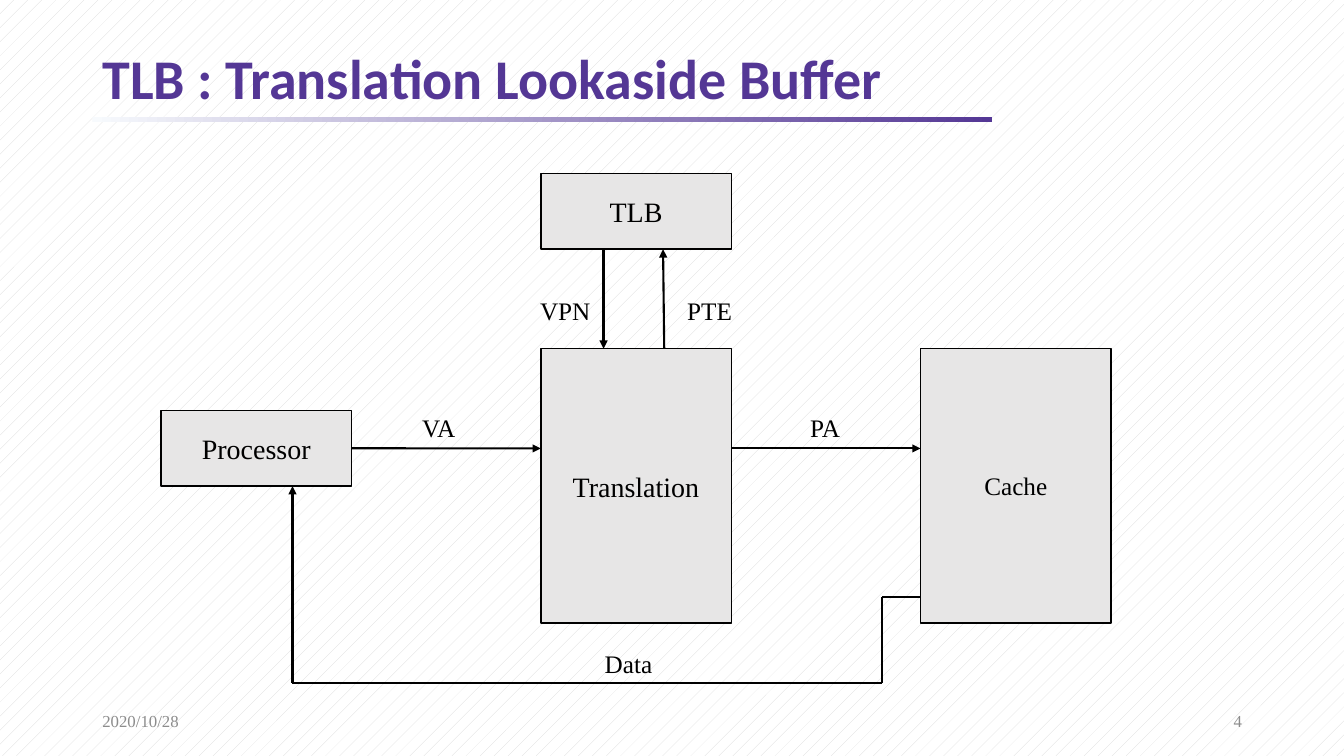
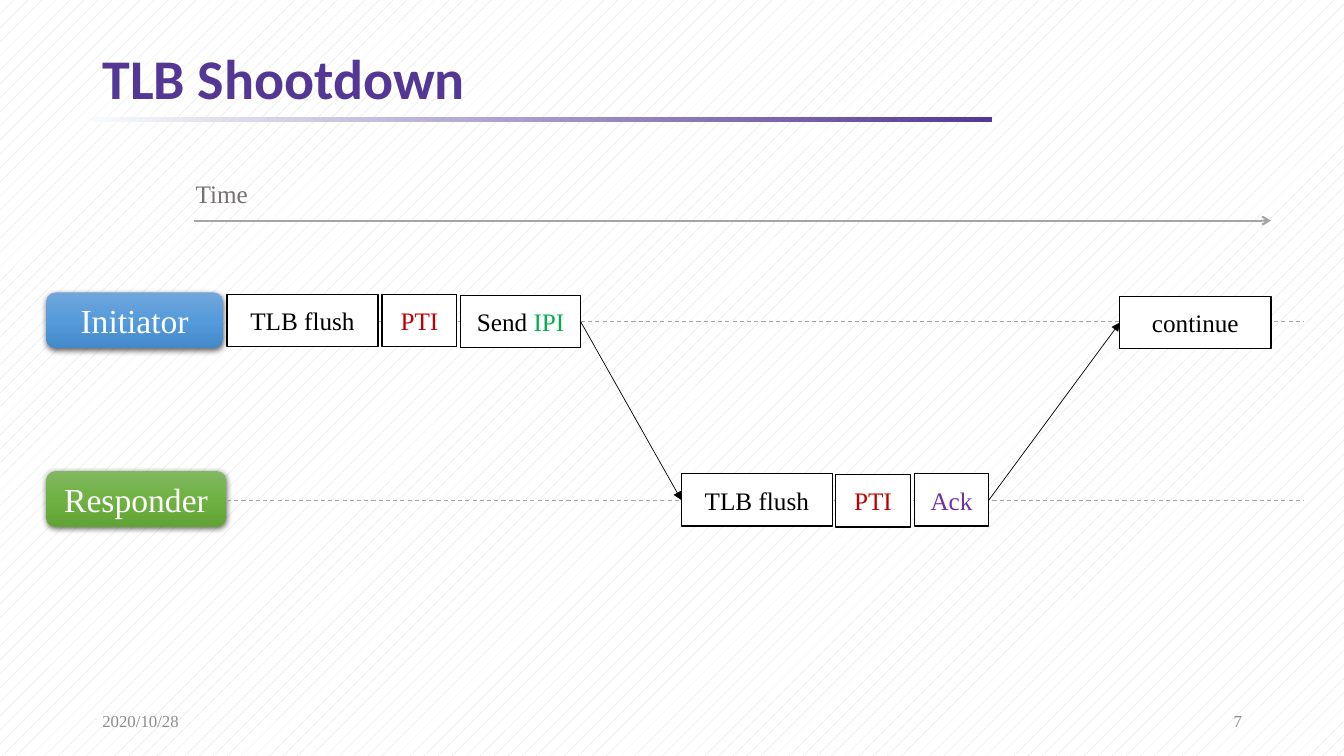
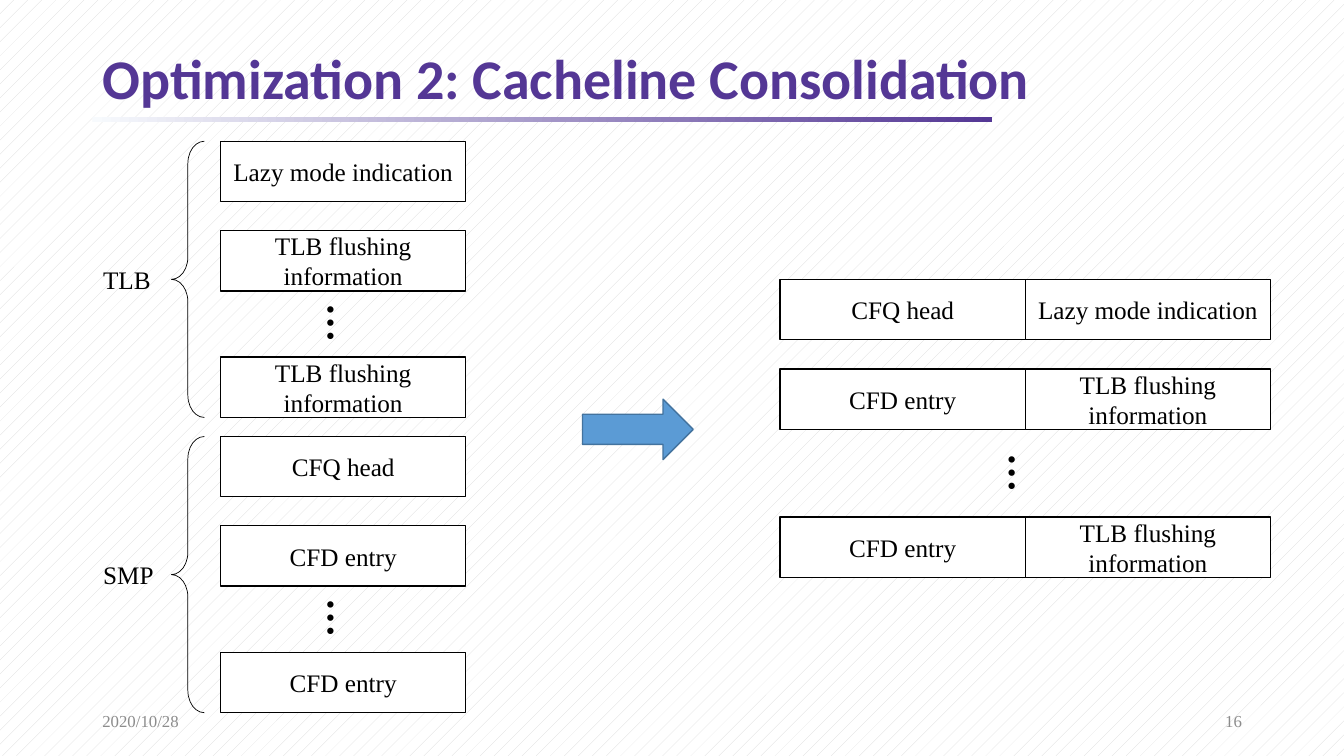
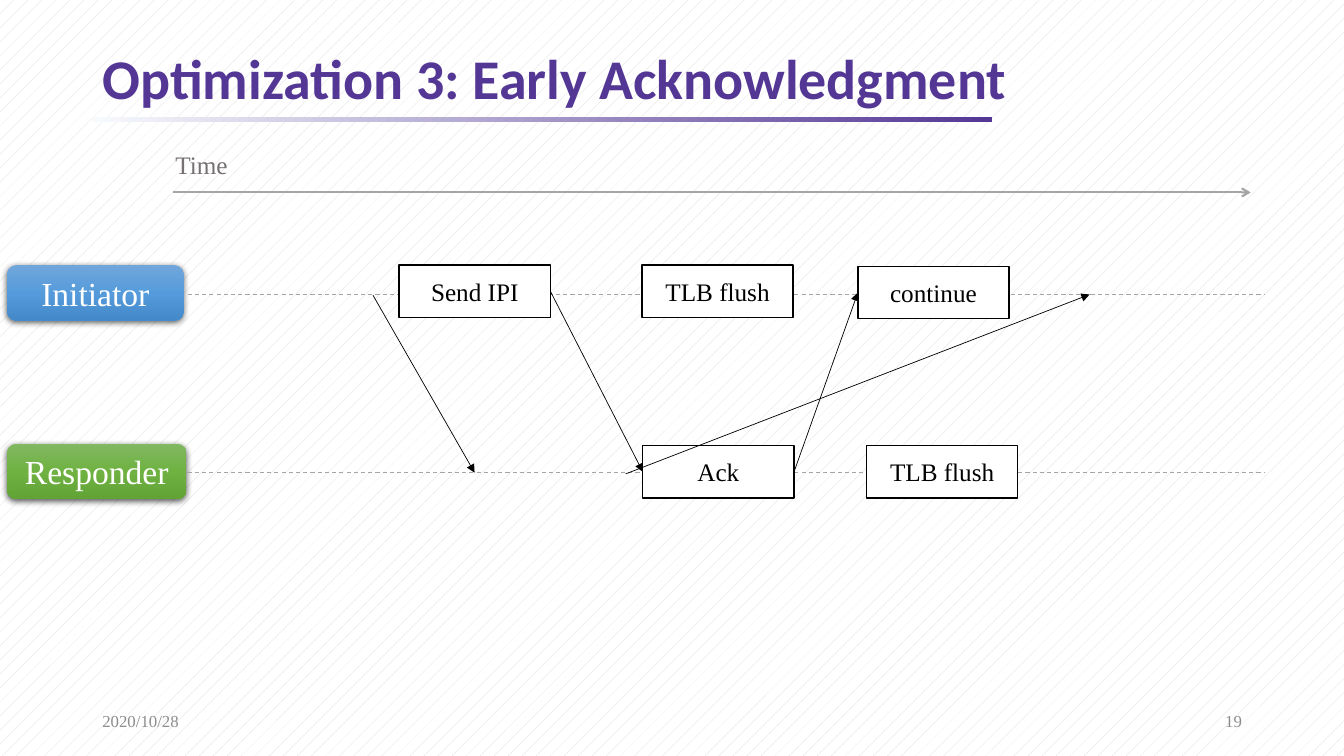
"""Build four slides on TLB shootdown and its optimizations."""
from itertools import pairwise

from lxml import etree
from pptx import Presentation
from pptx.dml.color import RGBColor
from pptx.enum import dml, shapes, text
from pptx.oxml import ns
from pptx.util import Cm, Pt

BLACK = RGBColor(0x00, 0x00, 0x00)
WHITE = RGBColor(0xFF, 0xFF, 0xFF)
PURPLE = RGBColor(0x54, 0x37, 0x95)
PALE = RGBColor(0xF7, 0xFA, 0xFD)
STRIPE = RGBColor(0xD9, 0xD9, 0xD9)
FOOTER_GRAY = RGBColor(0x8C, 0x8C, 0x8C)
BLOCK_GRAY = RGBColor(0xE7, 0xE6, 0xE6)
LINE_GRAY = RGBColor(0xA5, 0xA5, 0xA5)
TIME_GRAY = RGBColor(0x76, 0x71, 0x71)
ARROW_BLUE = RGBColor(0x5B, 0x9B, 0xD5)
ARROW_EDGE = RGBColor(0x43, 0x73, 0x9E)
RED = RGBColor(0xC0, 0x00, 0x00)
GREEN = RGBColor(0x00, 0xB0, 0x50)
VIOLET = RGBColor(0x70, 0x30, 0xA0)
BLUE_GRADIENT = (RGBColor(0x71, 0xA6, 0xDB), RGBColor(0x55, 0x9B, 0xDB),
                 RGBColor(0x44, 0x8A, 0xCA))
GREEN_GRADIENT = (RGBColor(0x81, 0xB8, 0x61), RGBColor(0x6F, 0xB2, 0x42),
                  RGBColor(0x62, 0xA3, 0x36))
BODY_FONT, TITLE_FONT = "Times New Roman", "Calibri"
LEFT, CENTER, RIGHT = (text.PP_ALIGN.LEFT, text.PP_ALIGN.CENTER,
                       text.PP_ALIGN.RIGHT)
SHAPE = shapes.MSO_SHAPE
CELL_W, CELL_H = 6.18, 1.52
STEP_W, SMALL_W, STEP_H = 3.81, 1.88, 1.32
LANE_GAP, LANE_LENGTH = 4.5, 27.15


def child(parent, tag, **attrs):
    """Append a DrawingML child element."""
    return etree.SubElement(parent, ns.qn(f"a:{tag}"), attrs)


def style(p, size, color, align=LEFT, bold=False, font=BODY_FONT):
    """Format a whole paragraph."""
    p.alignment = align
    p.font.name, p.font.size, p.font.bold = font, Pt(size), bold
    p.font.color.rgb = color


def label(s, words, x, y, w=1.8, h=1.02, size=18, color=BLACK, align=LEFT,
          bold=False, anchor=text.MSO_ANCHOR.TOP):
    """Add a text box."""
    sp = s.shapes.add_textbox(Cm(x), Cm(y), Cm(w), Cm(h))
    tf = sp.text_frame
    tf.word_wrap, tf.vertical_anchor = True, anchor
    tf.text = words
    style(tf.paragraphs[0], size, color, align, bold)
    return sp


def preset(s, kind, x, y, w, h, fill=None, line=None, width=1):
    """Add a preset shape without shadow; None leaves fill or line out."""
    sp = s.shapes.add_shape(kind, Cm(x), Cm(y), Cm(w), Cm(h))
    sp.shadow.inherit = False
    if fill is None:
        sp.fill.background()
    else:
        sp.fill.solid()
        sp.fill.fore_color.rgb = fill
    if line is None:
        sp.line.fill.background()
    else:
        sp.line.color.rgb = line
        sp.line.width = Pt(width)
    return sp


def write(sp, words, size, color):
    """Centre one line of text in a shape."""
    tf = sp.text_frame
    tf.word_wrap, tf.vertical_anchor = True, text.MSO_ANCHOR.MIDDLE
    p = tf.paragraphs[0]
    p.text = words
    style(p, size, color, CENTER)
    return p


def box(s, words, x, y, w, h, fill=WHITE, size=18, color=BLACK):
    """Add an outlined rectangle with text."""
    sp = preset(s, SHAPE.RECTANGLE, x, y, w, h, fill, BLACK)
    write(sp, words, size, color)
    return sp


def gradient(sp, colors, angle):
    """Fill a shape with evenly spaced gradient colours."""
    sp.fill.gradient()
    sp.fill.gradient_angle = angle
    stops = sp.element.spPr.find(ns.qn("a:gradFill")).find(ns.qn("a:gsLst"))
    for stop in list(stops):
        stops.remove(stop)
    for i, color in enumerate(colors):
        stop = child(stops, "gs", pos=str(100000 * i // (len(colors) - 1)))
        child(stop, "srgbClr", val=str(color))


def badge(s, words, x, y, w, colors):
    """Add a rounded lane name with gradient and soft shadow."""
    sp = preset(s, SHAPE.ROUNDED_RECTANGLE, x, y, w, 1.4)
    gradient(sp, colors, 270)
    shadow = child(sp.element.spPr.find(ns.qn("a:effectLst")), "outerShdw",
                   blurRad="57150", dist="19050", dir="5400000",
                   algn="ctr", rotWithShape="0")
    child(child(shadow, "srgbClr", val="000000"), "alpha", val="63000")
    write(sp, words, 24, WHITE)


def line(s, start, end, width=1.5, color=BLACK, head=None, dash=None):
    """Add a straight line, with an arrowhead at its end if named."""
    cn = s.shapes.add_connector(shapes.MSO_CONNECTOR.STRAIGHT,
                                *map(Cm, (*start, *end)))
    cn.line.color.rgb, cn.line.width = color, Pt(width)
    if dash:
        cn.line.dash_style = dash
    if head:
        child(cn.line._get_or_add_ln(), "tailEnd", type=head)
    child(cn.element.spPr, "effectLst")
    return cn


def message(s, sender, receiver):
    """Join the right side of one box to the left side of another."""
    cn = line(s, (0, 0), (1, 1), 0.5, head="triangle")
    cn.begin_connect(sender, 3)
    cn.end_connect(receiver, 1)


def ellipsis(s, x, y):
    """Add three vertical dots."""
    label(s, "…", x, y, 1.5, 1.45, 28, bold=True).rotation = 90


def add_rule(s, layout):
    """Put the fading title rule on the layout."""
    sp = preset(s, SHAPE.RECTANGLE, 2.33, 2.95, 22.66, 0.13)
    gradient(sp, (PALE, PURPLE), 0)
    layout.shapes.element.append(sp.element)


def new_slide(prs, title, number):
    """Add a slide with title, date and number."""
    s = prs.slides.add_slide(prs.slide_layouts[5])
    sp = s.shapes.title
    sp.left, sp.top, sp.width, sp.height = map(Cm, (2.33, 1.09, 29.21, 1.91))
    tf = sp.text_frame
    tf.text = title
    tf.auto_size = text.MSO_AUTO_SIZE.NONE
    tf.vertical_anchor = text.MSO_ANCHOR.MIDDLE
    p = tf.paragraphs[0]
    p.line_spacing = 0.9
    style(p, 40, PURPLE, bold=True, font=TITLE_FONT)
    for words, x, align in (("2020/10/28", 2.33, LEFT),
                            (str(number), 23.93, RIGHT)):
        label(s, words, x, 17.65, 7.62, size=12, color=FOOTER_GRAY,
              align=align, anchor=text.MSO_ANCHOR.MIDDLE)
    return s


def timeline(s, time_x, time_y, lane_x, lane_y):
    """Draw the time arrow and the two named lanes."""
    line(s, (time_x, time_y), (time_x + LANE_LENGTH, time_y),
         color=LINE_GRAY, head="arrow")
    label(s, "Time", time_x - 0.2, time_y - 1.2, 2.16, color=TIME_GRAY)
    lanes = (("Initiator", 4.45, BLUE_GRADIENT),
             ("Responder", 4.52, GREEN_GRADIENT))
    for i, (name, w, colors) in enumerate(lanes):
        y = lane_y + i * LANE_GAP
        badge(s, name, lane_x, y, w, colors)
        x = lane_x + 4.55
        line(s, (x, y + 0.73), (x + LANE_LENGTH, y + 0.73), 0.75, LINE_GRAY,
             dash=dml.MSO_LINE.DASH)


def lookaside_slide(s):
    """Draw the translation path through the TLB."""
    columns = [4.06 + 9.57 * i for i in range(3)]
    w, mid = 4.8, 11.3
    box(s, "Translation", columns[1], 8.79, w, 6.91, BLOCK_GRAY, 20)
    box(s, "Cache", columns[2], 8.79, w, 6.91, BLOCK_GRAY)
    box(s, "TLB", columns[1], 4.37, w, 1.91, BLOCK_GRAY, 20)
    processor = box(s, "Processor", columns[0], 10.34, w, 1.91, BLOCK_GRAY, 20)
    va = line(s, (columns[0] + w, mid), (columns[1], mid), head="triangle")
    va.begin_connect(processor, 3)
    for start, end in (((15.21, 6.28), (15.21, 8.79)),
                       ((16.74, 8.79), (16.71, 6.28)),
                       ((columns[1] + w, mid), (columns[2], mid))):
        line(s, start, end, head="triangle")
    route = ((columns[2], 15.04), (22.23, 15.04), (22.23, 17.2), (7.37, 17.2))
    for start, end in pairwise(route):
        line(s, start, end)
    line(s, route[-1], (7.37, 12.25), head="triangle")
    for words, x, y in (("VA", 10.39, 10.26), ("VPN", 13.36, 7.32),
                        ("PTE", 17.07, 7.32), ("PA", 20.17, 10.26),
                        ("Data", 14.99, 16.21)):
        label(s, words, x, y)


def shootdown_slide(s):
    """Draw the steps of a TLB shootdown."""
    timeline(s, 4.88, 5.56, 1.17, 7.37)
    box(s, "TLB flush", 5.72, 7.42, STEP_W, STEP_H)
    box(s, "PTI", 9.63, 7.42, SMALL_W, STEP_H, color=RED)
    send = box(s, "Send ", 11.61, 7.44, 3.02, STEP_H)
    r = send.text_frame.paragraphs[0].add_run()
    r.text = "IPI"
    r.font.color.rgb = GREEN
    flush = box(s, "TLB flush", 17.17, 11.94, STEP_W, STEP_H)
    box(s, "PTI", 21.06, 11.96, SMALL_W, STEP_H, color=RED)
    ack = box(s, "Ack", 23.04, 11.94, SMALL_W, STEP_H, color=VIOLET)
    resume = box(s, "continue", 28.22, 7.47, STEP_W, STEP_H)
    message(s, send, flush)
    message(s, ack, resume)


def cacheline_slide(s):
    """Draw the cachelines before and after consolidation."""
    flushing = "TLB flushing information"
    tlb = ("Lazy mode indication", flushing, flushing)
    smp = ("CFQ head", "CFD entry", "CFD entry")
    for name, cells, top in (("TLB", tlb, 3.56), ("SMP", smp, 11)):
        for words, dy in zip(cells, (0, 2.25, 5.44)):
            box(s, words, 5.56, top + dy, CELL_W, CELL_H)
        brace = preset(s, SHAPE.LEFT_BRACE, 4.32, top, 0.83, 6.96,
                       line=BLACK, width=0.5)
        brace.adjustments[0] = 0.676
        ellipsis(s, 7.9, top + 3.86)
        label(s, name, 2.35, top + 2.97, 1.98)
    preset(s, SHAPE.RIGHT_ARROW, 14.68, 10.06, 2.79, 1.52,
           ARROW_BLUE, ARROW_EDGE)
    for *pair, y in zip(smp, tlb, (7.04, 9.3, 13.03)):
        for i, words in enumerate(pair):
            box(s, words, 19.66 + i * CELL_W, y, CELL_W, CELL_H)
    ellipsis(s, 25.07, 11.2)


def early_ack_slide(s):
    """Draw the steps with early acknowledgment."""
    timeline(s, 4.37, 4.85, 0.18, 6.68)
    send, _, ack, _, resume = [
        box(s, words, x, y, STEP_W, STEP_H) for words, x, y in (
            ("Send IPI", 10.06, 6.68), ("TLB flush", 16.18, 6.68),
            ("Ack", 16.2, 11.23), ("TLB flush", 21.84, 11.23),
            ("continue", 21.62, 6.71))]
    message(s, send, ack)
    message(s, ack, resume)
    for start, end in (((9.4, 7.44), (11.96, 11.91)),
                       ((15.77, 11.94), (27.46, 7.42))):
        line(s, start, end, 0.5, head="triangle")


def main():
    """Build and save the presentation."""
    prs = Presentation()
    prs.slide_width, prs.slide_height = Cm(33.87), Cm(19.05)
    fill = prs.slide_master.background.fill
    fill.patterned()
    fill.pattern = dml.MSO_PATTERN.PERCENT_5
    fill.fore_color.rgb, fill.back_color.rgb = STRIPE, WHITE
    slides = (
        ("TLB : Translation Lookaside Buffer", 4, lookaside_slide),
        ("TLB Shootdown", 7, shootdown_slide),
        ("Optimization 2: Cacheline Consolidation", 16, cacheline_slide),
        ("Optimization 3: Early Acknowledgment", 19, early_ack_slide))
    for title, number, draw in slides:
        draw(new_slide(prs, title, number))
    add_rule(prs.slides[0], prs.slide_layouts[5])
    prs.save("out.pptx")


if __name__ == "__main__":
    main()
